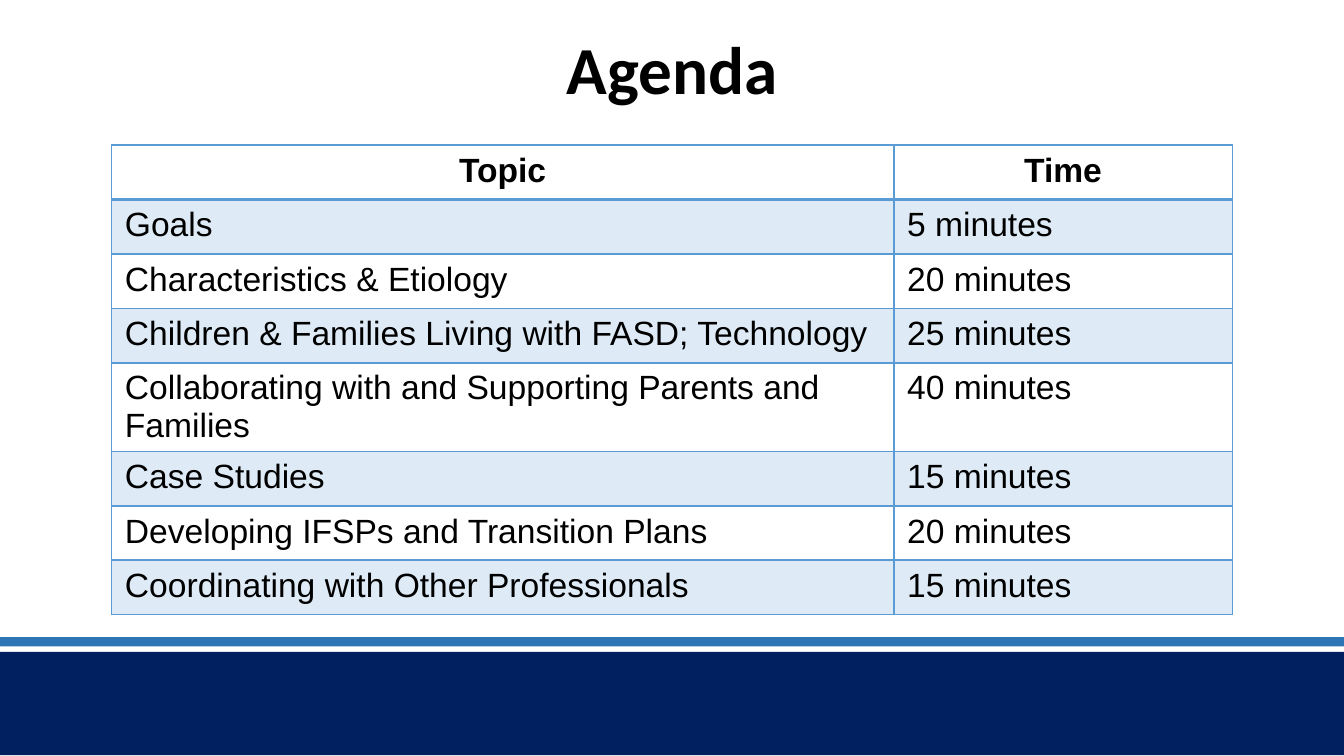
from pptx import Presentation
from pptx.dml.color import RGBColor
from pptx.enum.shapes import MSO_SHAPE
from pptx.enum.text import MSO_ANCHOR, PP_ALIGN
from pptx.oxml import parse_xml
from pptx.oxml.ns import nsdecls
from pptx.util import Inches, Pt

COLORS = {
    "navy": "002060",
    "stripe": "2E75B6",
    "border": "5B9BD5",
    "band": "DEEBF7",
    "text": "000000",
}
AGENDA = [
    ("Topic", "Time"),
    ("Goals", "5 minutes"),
    ("Characteristics & Etiology", "20 minutes"),
    ("Children & Families Living with FASD; Technology", "25 minutes"),
    ("Collaborating with and Supporting Parents and Families", "40 minutes"),
    ("Case Studies", "15 minutes"),
    ("Developing IFSPs and Transition Plans", "20 minutes"),
    ("Coordinating with Other Professionals", "15 minutes"),
]


def style_paragraph(paragraph, font_name, size, bold, alignment):
    paragraph.alignment = alignment
    paragraph.font.name = font_name
    paragraph.font.size = Pt(size)
    paragraph.font.bold = bold
    paragraph.font.color.rgb = RGBColor.from_string(COLORS["text"])


def add_border(cell, side, width):
    """Append one cell border; call in the order L, R, T, B, before any fill."""
    cell._tc.get_or_add_tcPr().append(parse_xml(
        f'<a:ln{side} {nsdecls("a")} w="{Pt(width)}"><a:solidFill>'
        f'<a:srgbClr val="{COLORS["border"]}"/></a:solidFill></a:ln{side}>'))


# A 16:9 slide
presentation = Presentation()
presentation.slide_width = Inches(10)
presentation.slide_height = Inches(10) * 9 // 16
slide = presentation.slides.add_slide(presentation.slide_layouts[6])

# Footer band and the stripe above it
for top, height, color in [(4.85, 0.77, "navy"), (4.74, 0.07, "stripe")]:
    bar = slide.shapes.add_shape(
        MSO_SHAPE.RECTANGLE, 0, Inches(top), Inches(10), Inches(height))
    bar.shadow.inherit = False
    bar.fill.solid()
    bar.fill.fore_color.rgb = RGBColor.from_string(COLORS[color])
    bar.line.fill.background()

# Title
title = slide.shapes.add_textbox(
    Inches(0.69), Inches(0.17), Inches(8.62), Inches(1.09))
title_frame = title.text_frame
title_frame.word_wrap = True
title_frame.vertical_anchor = MSO_ANCHOR.TOP
title_frame.margin_left = title_frame.margin_right = Inches(0.1)
title_frame.margin_top = title_frame.margin_bottom = Inches(0.1)
title_paragraph = title_frame.paragraphs[0]
title_paragraph.text = "Agenda"
title_paragraph.line_spacing = 0.9
style_paragraph(title_paragraph, "Calibri", 36, True, PP_ALIGN.CENTER)

# Agenda table: header row, then shaded and plain rows in turn
table = slide.shapes.add_table(
    len(AGENDA), 2, Inches(0.83), Inches(1.08), Inches(8.34), Inches(3.24)).table
table.first_row = False
table.horz_banding = False
table.columns[0].width = Inches(5.82)
table.columns[1].width = Inches(2.52)

for row_index, row in enumerate(AGENDA):
    is_header = row_index == 0
    for column_index, text in enumerate(row):
        cell = table.cell(row_index, column_index)
        cell.margin_bottom = Inches(0.01)
        for side in "LRTB":
            is_header_rule = (row_index, side) in [(0, "B"), (1, "T")]
            add_border(cell, side, 2 if is_header_rule else 1)
        if row_index % 2:
            cell.fill.solid()
            cell.fill.fore_color.rgb = RGBColor.from_string(COLORS["band"])
        else:
            cell.fill.background()
        paragraph = cell.text_frame.paragraphs[0]
        paragraph.text = text
        style_paragraph(paragraph, "Arial", 18, is_header,
                        PP_ALIGN.CENTER if is_header else PP_ALIGN.LEFT)

presentation.save("out.pptx")
